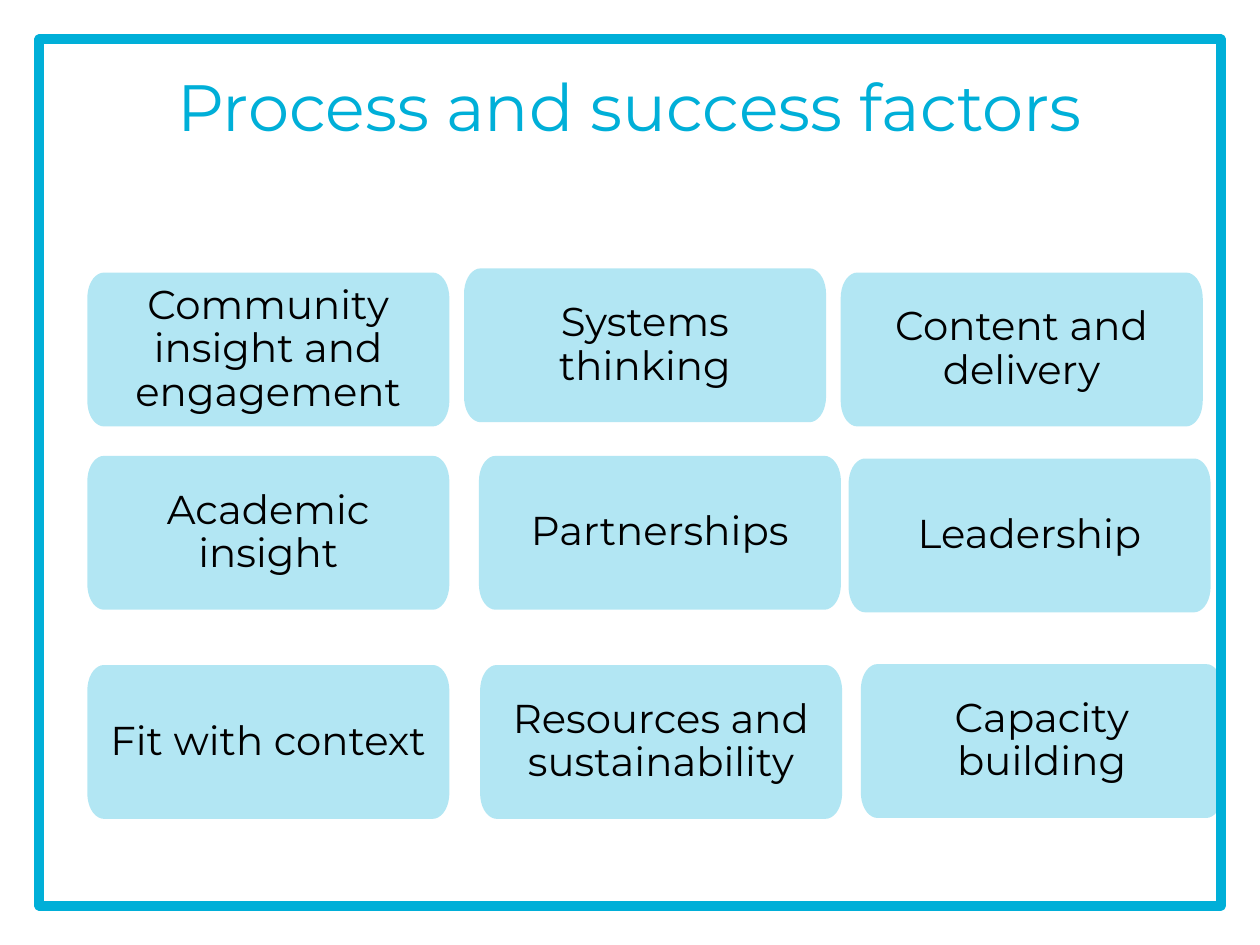
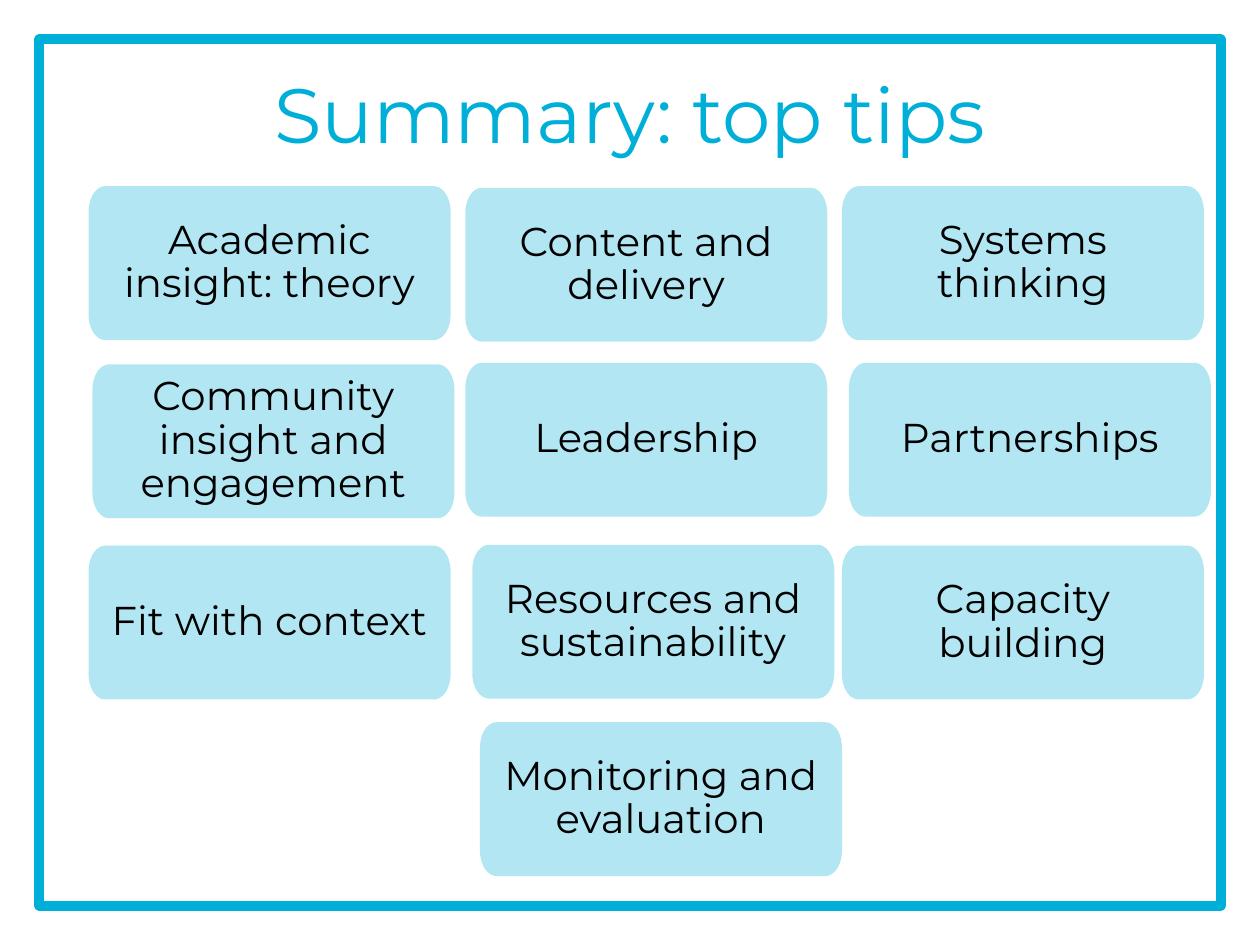
import math

import pptx
import pptx.dml.color
import pptx.enum.shapes
import pptx.enum.text
import pptx.oxml.ns
import pptx.util
from lxml import etree

Pt = pptx.util.Pt
BLUE = pptx.dml.color.RGBColor(0x00, 0xAF, 0xD8)
BLACK = pptx.dml.color.RGBColor(0x00, 0x00, 0x00)
FONT = "Montserrat"

# Boxes are left, top, width, height in points
FRAME_BOX = (22.5, 22.5, 675, 495)
TITLE_BOX = (36, 32.5, 648, 62.5)
CARD_WIDTH, CARD_HEIGHT = 206.9, 87.9
COLUMN_PITCH = 215.25
CORNER_X, CORNER_Y = 9.5, 14.6
CARD_OPACITY = 30
CARD_INSET = 5.75

# Each card: label, then its nudge right and down from the grid
PROCESS = {
    "title": "Process and success factors",
    "title_size": 37.4,
    "origin": (49.9, 155.75),
    "row_offsets": (0, 104.75, 224.25),
    "rows": [
        [("Community insight and engagement", 0, 0), ("Systems thinking", 0, -2.4),
         ("Content and delivery", 0, 0)],
        [("Academic insight", 0, 0), ("Partnerships", 8.5, 0), ("Leadership", 4.5, 1.5)],
        [("Fit with context", 0, 0), ("Resources and sustainability", 9.2, 0),
         ("Capacity building", 11.5, -0.5)],
    ],
}
SUMMARY = {
    "title": "Summary: top tips",
    "title_size": 44,
    "origin": (50.6, 106.4),
    "row_offsets": (0, 100.9, 205.4, 306.3),
    "rows": [
        [("Academic insight: theory", 0, 0), ("Content and delivery", 0, 0.9),
         ("Systems thinking", 0, 0)],
        [("Community insight and engagement", 2.2, 0.9), ("Leadership", 0, 0),
         ("Partnerships", 4, 0)],
        [("Fit with context", 0, 0), ("Resources and sustainability", 4, -0.5),
         ("Capacity building", 0, 0)],
        [None, ("Monitoring and evaluation", 8.4, 0)],
    ],
}


def apply_format(target, values):
    for name, value in values.items():
        setattr(target, name, value)


def write_text(shape, text, size, color, spacing, frame_format):
    """Fill a shape with one centred paragraph."""
    frame = shape.text_frame
    apply_format(frame, {"word_wrap": True, "auto_size": pptx.enum.text.MSO_AUTO_SIZE.NONE,
                         **frame_format})
    para = frame.paragraphs[0]
    apply_format(para, {"alignment": pptx.enum.text.PP_ALIGN.CENTER, "line_spacing": spacing,
                        "space_before": Pt(0), "space_after": Pt(0)})
    span = para.add_run()
    span.text = text
    apply_format(span.font, {"name": FONT, "size": Pt(size), "bold": False})
    span.font.color.rgb = color


def add_frame(page, layout, box):
    """Draw the border and move it to the layout, behind every page."""
    border = page.shapes.add_shape(pptx.enum.shapes.MSO_SHAPE.RECTANGLE, *map(Pt, box))
    border.shadow.inherit = False
    border.fill.background()
    border.line.color.rgb = BLUE
    border.line.width = Pt(5.67)
    layout.shapes._spTree.insert(2, border._element)


def place_title(page, text, size, box):
    title = page.shapes.title
    apply_format(title, dict(zip(("left", "top", "width", "height"), map(Pt, box))))
    write_text(title, text, size, BLUE, 1.0,
               {"vertical_anchor": pptx.enum.text.MSO_ANCHOR.TOP, "margin_top": Pt(5.25)})


def card_outline(left, top, width, height):
    """Points of a box with elliptical corners, clockwise from the top left."""
    centres = [
        (left + CORNER_X, top + CORNER_Y),
        (left + width - CORNER_X, top + CORNER_Y),
        (left + width - CORNER_X, top + height - CORNER_Y),
        (left + CORNER_X, top + height - CORNER_Y),
    ]
    points = []
    for corner, (x, y) in enumerate(centres):
        for step in range(0, 91, 10):
            angle = math.radians(180 + 90 * corner + step)
            points.append((Pt(x + CORNER_X * math.cos(angle)),
                           Pt(y + CORNER_Y * math.sin(angle))))
    return points


def add_card(page, label, box):
    points = card_outline(*box)
    builder = page.shapes.build_freeform(*points[0], scale=1.0)
    builder.add_line_segments(points[1:], close=True)
    card = builder.convert_to_shape()
    card.shadow.inherit = False
    card.fill.solid()
    card.fill.fore_color.rgb = BLUE
    card.line.fill.background()

    # Transparency of the fill
    tag = pptx.oxml.ns.qn
    fill_color = card._element.spPr.find(tag("a:solidFill")).find(tag("a:srgbClr"))
    etree.SubElement(fill_color, tag("a:alpha")).set("val", str(CARD_OPACITY * 1000))

    margins = {f"margin_{side}": Pt(CARD_INSET) for side in ("left", "top", "right", "bottom")}
    write_text(card, label, 23, BLACK, 0.9,
               {"vertical_anchor": pptx.enum.text.MSO_ANCHOR.MIDDLE, **margins})


def add_card_grid(page, origin, row_offsets, rows):
    left, top = origin
    for offset, row in zip(row_offsets, rows):
        for column, entry in enumerate(row):
            if entry is None:
                continue
            label, right, down = entry
            add_card(page, label, (left + column * COLUMN_PITCH + right, top + offset + down,
                                   CARD_WIDTH, CARD_HEIGHT))


def add_page(deck, layout, content):
    page = deck.slides.add_slide(layout)
    place_title(page, content["title"], content["title_size"], TITLE_BOX)
    add_card_grid(page, content["origin"], content["row_offsets"], content["rows"])
    return page


def main():
    deck = pptx.Presentation()
    deck.slide_width, deck.slide_height = Pt(720), Pt(540)
    layout = deck.slide_layouts.get_by_name("Title Only")
    pages = [add_page(deck, layout, content) for content in (PROCESS, SUMMARY)]
    add_frame(pages[0], layout, FRAME_BOX)
    deck.save("out.pptx")


if __name__ == "__main__":
    main()
